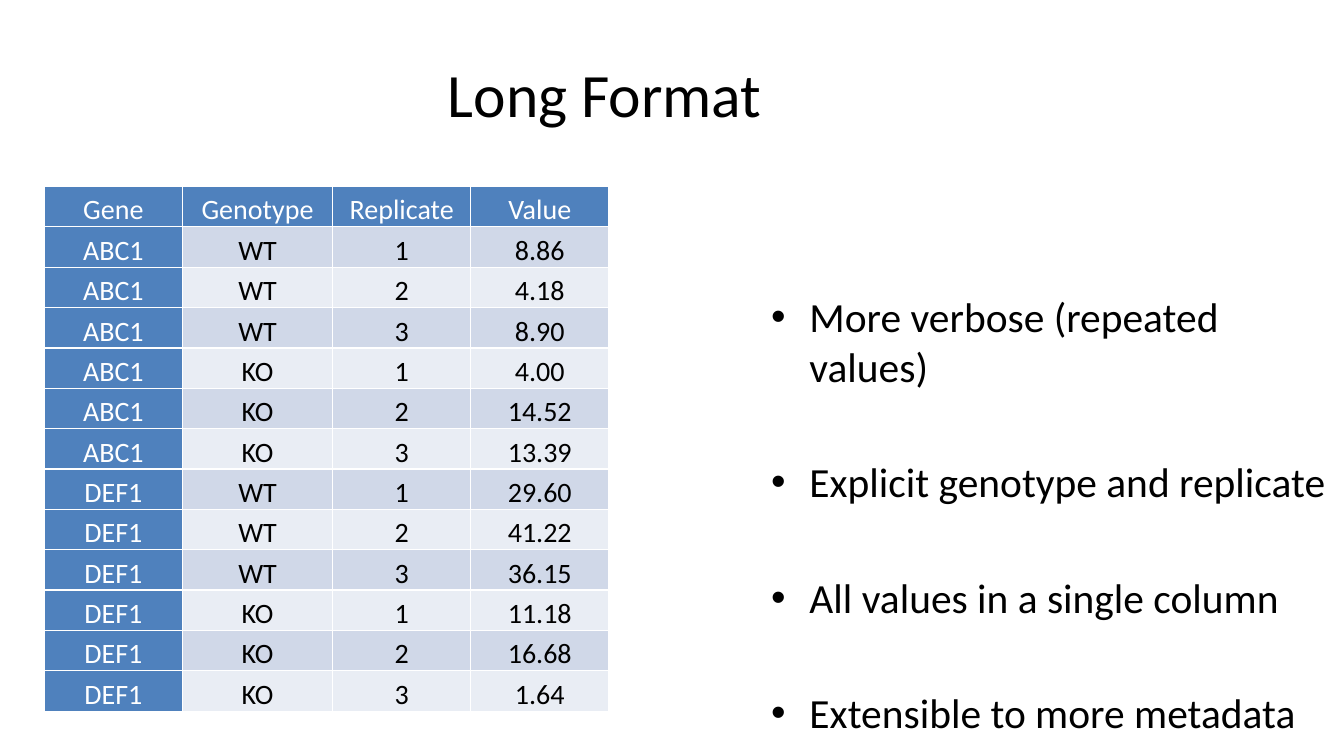
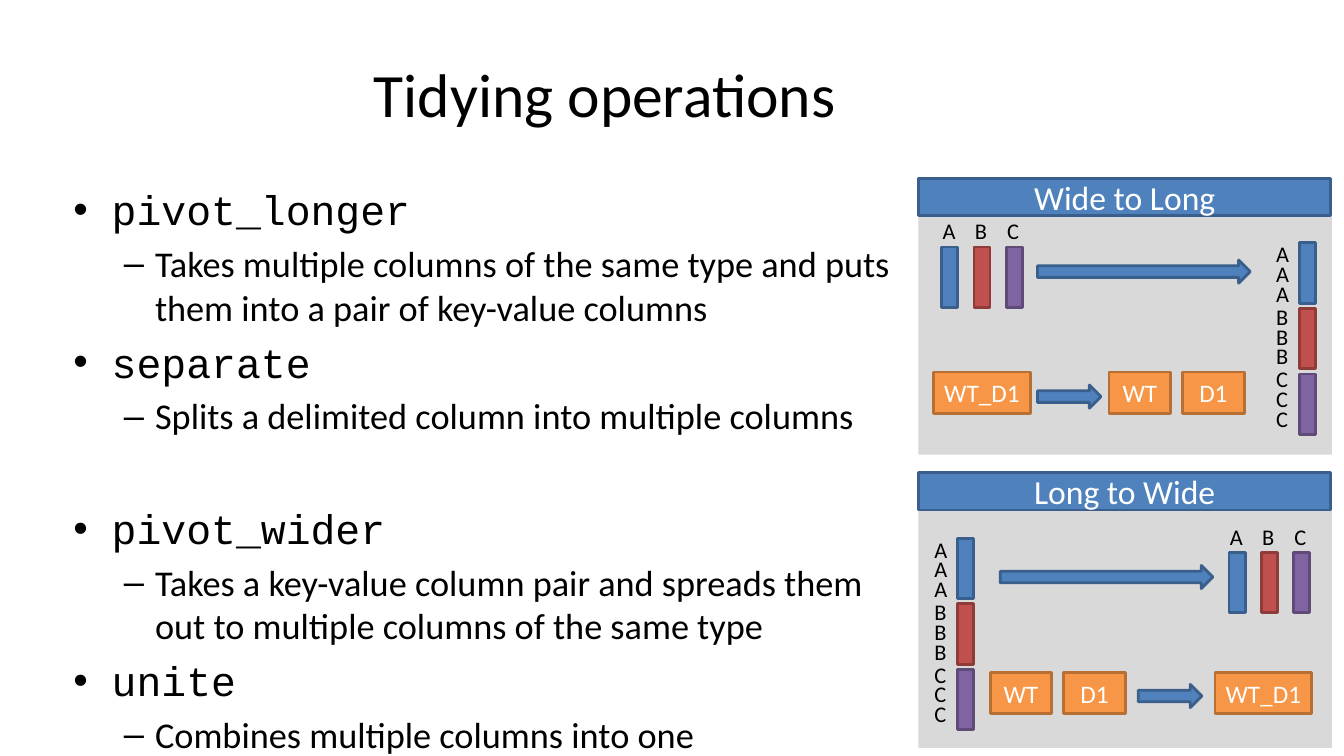
"""Build two slides on long-format data and tidying operations."""
from lxml import etree
from pptx import Presentation
from pptx.dml.color import RGBColor
from pptx.enum.shapes import MSO_SHAPE
from pptx.enum.text import MSO_ANCHOR, PP_ALIGN
from pptx.oxml.ns import qn
from pptx.util import Inches, Pt

RECT, ARROW = MSO_SHAPE.RECTANGLE, MSO_SHAPE.RIGHT_ARROW
TOP, MIDDLE, BOTTOM = MSO_ANCHOR.TOP, MSO_ANCHOR.MIDDLE, MSO_ANCHOR.BOTTOM
LEFT, CENTER = PP_ALIGN.LEFT, PP_ALIGN.CENTER
BLACK = RGBColor(0x00, 0x00, 0x00)
WHITE = RGBColor(0xFF, 0xFF, 0xFF)
PANEL_GREY = RGBColor(0xD9, 0xD9, 0xD9)
BLUE = RGBColor(0x4F, 0x81, 0xBD)
BLUE_EDGE = RGBColor(0x3A, 0x5F, 0x8C)
RED = RGBColor(0xC0, 0x50, 0x4D)
RED_EDGE = RGBColor(0x8E, 0x3B, 0x39)
PURPLE = RGBColor(0x80, 0x64, 0xA2)
PURPLE_EDGE = RGBColor(0x5F, 0x4A, 0x78)
ORANGE = RGBColor(0xF7, 0x96, 0x46)
ORANGE_EDGE = RGBColor(0xB7, 0x6F, 0x34)
BANDS = [RGBColor(0xD0, 0xD8, 0xE8), RGBColor(0xE9, 0xED, 0xF4)]
BODY_FONT, CODE_FONT = "Calibri", "Courier New"
COLUMNS = [("A", BLUE, BLUE_EDGE), ("B", RED, RED_EDGE), ("C", PURPLE, PURPLE_EDGE)]
GROUP_GAP = 47


def add_text(slide, x, y, w, h, lines, size, align=LEFT, anchor=TOP, wrap=True, spacing=None):
    """Add a text box with one paragraph per line and return its paragraphs."""
    frame = slide.shapes.add_textbox(Inches(x), Inches(y), Inches(w), Inches(h)).text_frame
    frame.word_wrap = wrap
    frame.vertical_anchor = anchor
    frame.text = "\n".join(lines)
    for paragraph in frame.paragraphs:
        paragraph.alignment = align
        paragraph.line_spacing = spacing
        paragraph.font.size = Pt(size)
        paragraph.font.name = BODY_FONT
        paragraph.font.color.rgb = BLACK
    return frame.paragraphs


def add_block(slide, kind, x, y, w, h, fill, edge=None, label="", size=18):
    """Add a filled shape with an optional outline and a centred white label."""
    block = slide.shapes.add_shape(kind, Inches(x), Inches(y), Inches(w), Inches(h))
    block.shadow.inherit = False
    block.fill.solid()
    block.fill.fore_color.rgb = fill
    if edge is None:
        block.line.fill.background()
    else:
        block.line.color.rgb = edge
        block.line.width = Pt(2)
    if label:
        frame = block.text_frame
        frame.margin_left = frame.margin_right = 0
        frame.vertical_anchor = MIDDLE
        frame.text = label
        paragraph = frame.paragraphs[0]
        paragraph.alignment = CENTER
        paragraph.font.size = Pt(size)
        paragraph.font.name = BODY_FONT
        paragraph.font.color.rgb = WHITE


prs = Presentation()
prs.slide_width, prs.slide_height = Inches(13.33), Inches(7.5)
long_slide, tidy_slide = [prs.slides.add_slide(prs.slide_layouts[6]) for _ in range(2)]

PANELS = [
    dict(title="Wide to Long", top=1.77, height=2.74, wide=(9.34, 2.45), stack=(12.89, 2.41),
         arrows=[(10.29, 2.58, 2.11), (10.29, 3.82, 0.63)], tag_y=3.69,
         tags=[("WT_D1", 9.26, 0.96), ("WT", 11, 0.61), ("D1", 11.73, 0.61)]),
    dict(title="Long to Wide", top=4.69, height=2.73, wide=(12.19, 5.48), stack=(9.5, 5.34),
         arrows=[(9.92, 5.61, 2.11), (11.29, 6.79, 0.63)], tag_y=6.67,
         tags=[("WT", 9.82, 0.61), ("D1", 10.55, 0.61), ("WT_D1", 12.05, 0.96)]),
]
for panel in PANELS:
    add_block(tidy_slide, RECT, 9.11, panel["top"], 4.1, panel["height"], PANEL_GREY)
    add_block(tidy_slide, RECT, 9.11, panel["top"], 4.09, 0.37, BLUE, BLUE_EDGE, panel["title"], 24)
    wide_x, wide_y = panel["wide"]
    stack_x, stack_y = panel["stack"]
    for i, (letter, fill, edge) in enumerate(COLUMNS):
        column_x = wide_x + 0.32 * i
        add_block(tidy_slide, RECT, column_x, wide_y, 0.16, 0.6, fill, edge)
        add_text(tidy_slide, column_x - 0.09, wide_y - 0.34, 0.33, 0.37, [letter], 16, wrap=False)
        add_block(tidy_slide, RECT, stack_x, stack_y + 0.65 * i, 0.16, 0.6, fill, edge)
        add_text(tidy_slide, stack_x - 0.33, stack_y + 0.62 * i, 0.33, 0.7, [letter] * 3, 16,
                 wrap=False, spacing=Pt(14))
    for x, y, length in panel["arrows"]:
        add_block(tidy_slide, ARROW, x, y, length, 0.23, BLUE, BLUE_EDGE)
    for label, x, width in panel["tags"]:
        add_block(tidy_slide, RECT, x, panel["tag_y"], width, 0.41, ORANGE, ORANGE_EDGE, label)

for slide, title in [(long_slide, "Long Format"), (tidy_slide, "Tidying operations")]:
    add_text(slide, 0, 0.3, 12, 1.25, [title], 44, CENTER, MIDDLE)

long_points = add_text(long_slide, 7.55, 2.84, 5.78, 4.16, [
    "More verbose (repeated values)",
    "Explicit genotype and replicate",
    "All values in a single column",
    "Extensible to more metadata",
], 29.6)
tidy_points = add_text(tidy_slide, 0.63, 1.78, 8.44, 5.62, [
    "pivot_longer",
    "Takes multiple columns of the same type and puts them into a pair of key-value columns",
    "separate",
    "Splits a delimited column into multiple columns",
    "pivot_wider",
    "Takes a key-value column pair and spreads them out to multiple columns of the same type",
    "unite",
    "Combines multiple columns into one",
], 29.6)
for paragraph in long_points[1:]:
    paragraph.space_before = Pt(GROUP_GAP)
for function_name, description in zip(tidy_points[::2], tidy_points[1::2]):
    function_name.font.name = CODE_FONT
    function_name.space_before = Pt(5.9)
    description.level = 1
    description.font.size = Pt(25.9)
    description.space_before = Pt(5.2)
tidy_points[4].space_before = Pt(GROUP_GAP)
for paragraph in long_points + tidy_points:
    mark, margin, hang = ("–", 0.81, 0.31) if paragraph.level else ("•", 0.38, 0.38)
    properties = paragraph._p.get_or_add_pPr()
    properties.set("marL", str(Inches(margin)))
    properties.set("indent", str(-Inches(hang)))
    bullet_font = etree.Element(qn("a:buFont"), typeface="Arial")
    bullet = etree.Element(qn("a:buChar"), char=mark)
    defaults = properties.find(qn("a:defRPr"))
    defaults.addprevious(bullet_font)
    defaults.addprevious(bullet)

VALUES = ["8.86", "4.18", "8.90", "4.00", "14.52", "13.39",
          "29.60", "41.22", "36.15", "11.18", "16.68", "1.64"]
samples = [(gene, genotype, replicate)
           for gene in ("ABC1", "DEF1") for genotype in ("WT", "KO") for replicate in "123"]
rows = [("Gene", "Genotype", "Replicate", "Value")]
rows += [(*sample, value) for sample, value in zip(samples, VALUES)]
table = long_slide.shapes.add_table(len(rows), 4, Inches(0.44), Inches(1.85),
                                    Inches(5.6), Inches(5.2)).table
for column, width in zip(table.columns, (1.37, 1.49, 1.37, 1.37)):
    column.width = Inches(width)
for r, row in enumerate(rows):
    table.rows[r].height = Inches(0.4)
    for c, value in enumerate(row):
        heading = r == 0 or c == 0
        cell = table.cell(r, c)
        cell.margin_left = cell.margin_right = Inches(0.07)
        cell.margin_top = cell.margin_bottom = 0
        cell.vertical_anchor = BOTTOM
        for side in ("lnL", "lnR", "lnT", "lnB"):
            border = etree.SubElement(cell._tc.get_or_add_tcPr(), qn("a:" + side), w=str(Pt(1)))
            solid = etree.SubElement(border, qn("a:solidFill"))
            etree.SubElement(solid, qn("a:srgbClr"), val=str(WHITE))
        cell.fill.solid()
        cell.fill.fore_color.rgb = BLUE if heading else BANDS[(r - 1) % 2]
        cell.text = value
        paragraph = cell.text_frame.paragraphs[0]
        paragraph.alignment = CENTER
        paragraph.line_spacing = 1.2
        paragraph.font.size = Pt(20)
        paragraph.font.name = BODY_FONT
        paragraph.font.bold = False
        paragraph.font.color.rgb = WHITE if heading else BLACK

prs.save("out.pptx")
